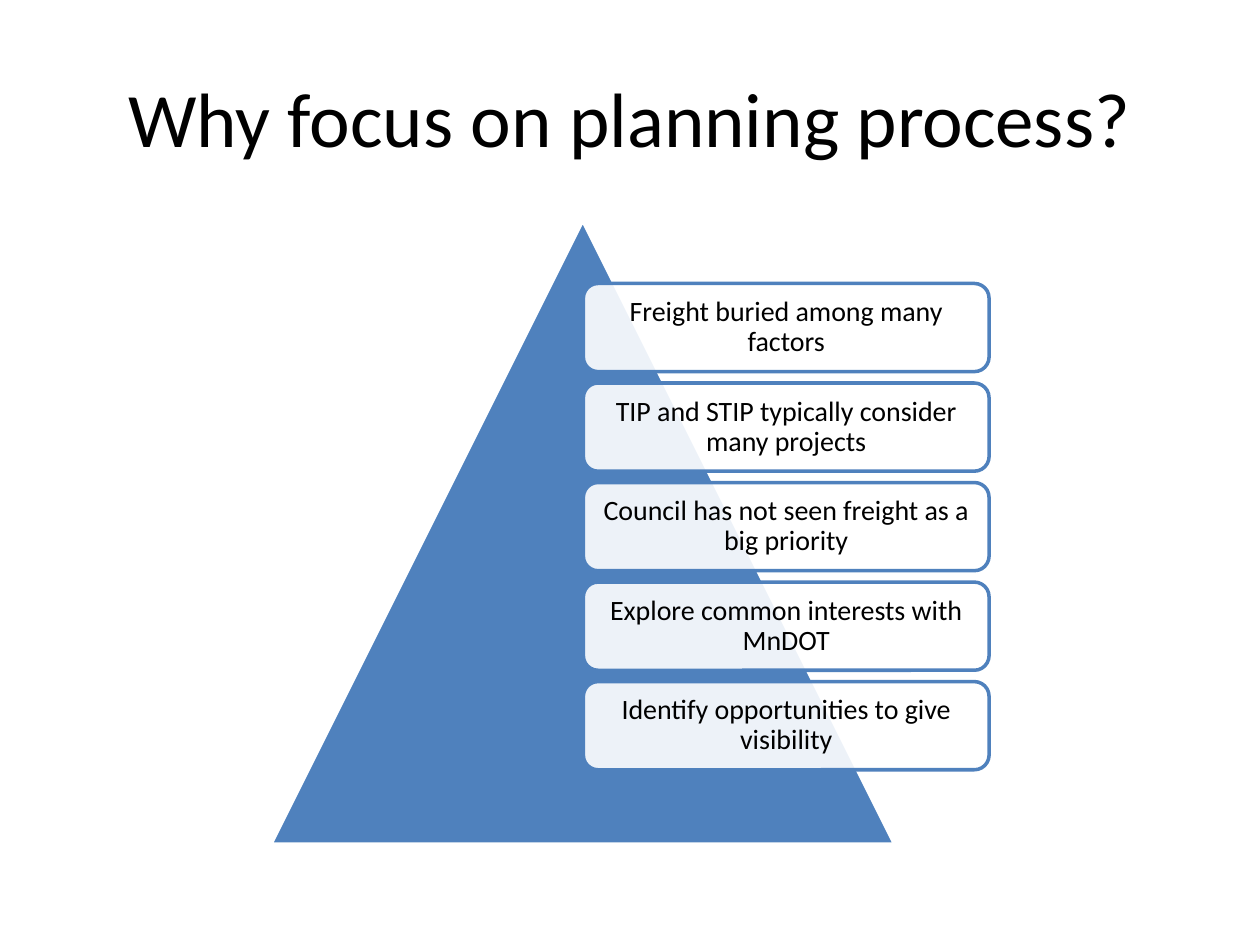
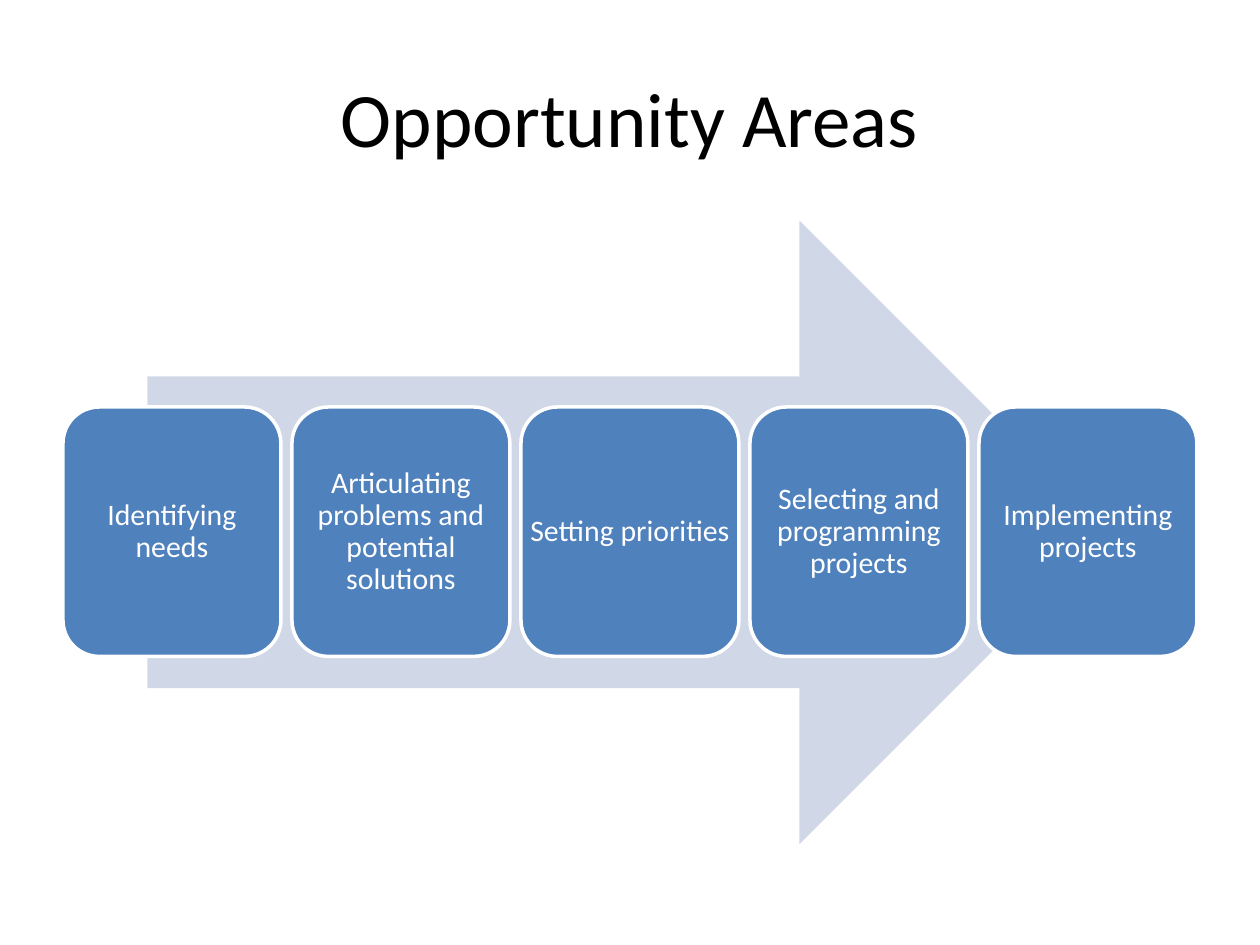
from dataclasses import dataclass
from pptx import Presentation
from pptx.dml.color import RGBColor as Rgb
from pptx.enum.shapes import MSO_SHAPE as Geo
from pptx.enum.text import MSO_ANCHOR as Anchor, PP_ALIGN as Align
from pptx.oxml.ns import qn
from pptx.util import Inches, Pt
from lxml import etree

# Content
REASONS = ("Why focus on planning process?", [
    "Freight buried among many factors",
    "TIP and STIP typically consider many projects",
    "Council has not seen freight as a big priority",
    "Explore common interests with MnDOT",
    "Identify opportunities to give visibility",
])
AREAS = ("Opportunity Areas", [
    "Identifying needs",
    "Articulating problems and potential solutions",
    "Setting priorities",
    "Selecting and programming projects",
    "Implementing projects",
])


@dataclass(frozen=True)
class Theme:
    font: str = "Calibri"
    black: str = "000000"
    white: str = "FFFFFF"
    blue: str = "4F81BD"
    pale: str = "D0D8E8"
    title: int = 44
    card: int = 16
    step: int = 17
    line: int = 2
    inset: float = 0.07


T = Theme()


# Shared parts
def add_part(slide, geo, box, fill, line=None, alpha=None):
    part = slide.shapes.add_shape(geo, *map(Inches, box))
    part.shadow.inherit = False
    part.fill.solid()
    part.fill.fore_color.rgb = Rgb.from_string(fill)
    if alpha:
        color = part.fill._xPr.find(".//" + qn("a:srgbClr"))
        etree.SubElement(color, qn("a:alpha")).set("val", str(alpha * 1000))
    if line:
        part.line.color.rgb = Rgb.from_string(line)
        part.line.width = Pt(T.line)
    else:
        part.line.fill.background()


def add_text(slide, box, text, size, color, inset=0.1, space=1.0):
    frame = slide.shapes.add_textbox(*map(Inches, box)).text_frame
    frame.word_wrap = True
    frame.vertical_anchor = Anchor.MIDDLE
    frame.margin_left = frame.margin_right = Inches(inset)
    frame.margin_top = frame.margin_bottom = Inches(min(inset, 0.07))
    para = frame.paragraphs[0]
    para.alignment = Align.CENTER
    para.line_spacing = space
    run = para.add_run()
    run.text = text
    run.font.name = T.font
    run.font.size = Pt(size)
    run.font.color.rgb = Rgb.from_string(color)


def add_card(slide, box, text, size, ink, fill, line, alpha=None):
    add_part(slide, Geo.ROUNDED_RECTANGLE, box, fill, line, alpha)
    add_text(slide, box, text, size, ink, T.inset, 0.9)


def add_slide(deck, title):
    slide = deck.slides.add_slide(deck.slide_layouts[6])
    add_text(slide, (0.5, 0.3, 9, 1.25), title, T.title, T.black)
    return slide


# Pyramid with a column of cards
def add_reasons(deck):
    title, cards = REASONS
    slide = add_slide(deck, title)
    add_part(slide, Geo.ISOSCELES_TRIANGLE, (2.15, 1.75, 4.95, 4.95),
             T.blue, T.white)
    top, high, gap = 2.25, 0.7, 0.09
    for i, text in enumerate(cards):
        box = (4.63, top + i * (high + gap), 3.22, high)
        add_card(slide, box, text, T.card, T.black, T.white, T.blue, 90)


# Arrow with a row of steps
def add_areas(deck):
    title, steps = AREAS
    slide = add_slide(deck, title)
    add_part(slide, Geo.RIGHT_ARROW, (1.17, 1.75, 7.65, 4.95), T.pale)
    left, right, wide = 0.5, 9.5, 1.73
    pitch = (right - left - wide) / (len(steps) - 1)
    for i, text in enumerate(steps):
        box = (left + i * pitch, 3.23, wide, 1.98)
        add_card(slide, box, text, T.step, T.white, T.blue, T.white)


def main():
    deck = Presentation()
    deck.slide_width, deck.slide_height = Inches(10), Inches(7.5)
    add_reasons(deck)
    add_areas(deck)
    deck.save("out.pptx")


if __name__ == "__main__":
    main()
